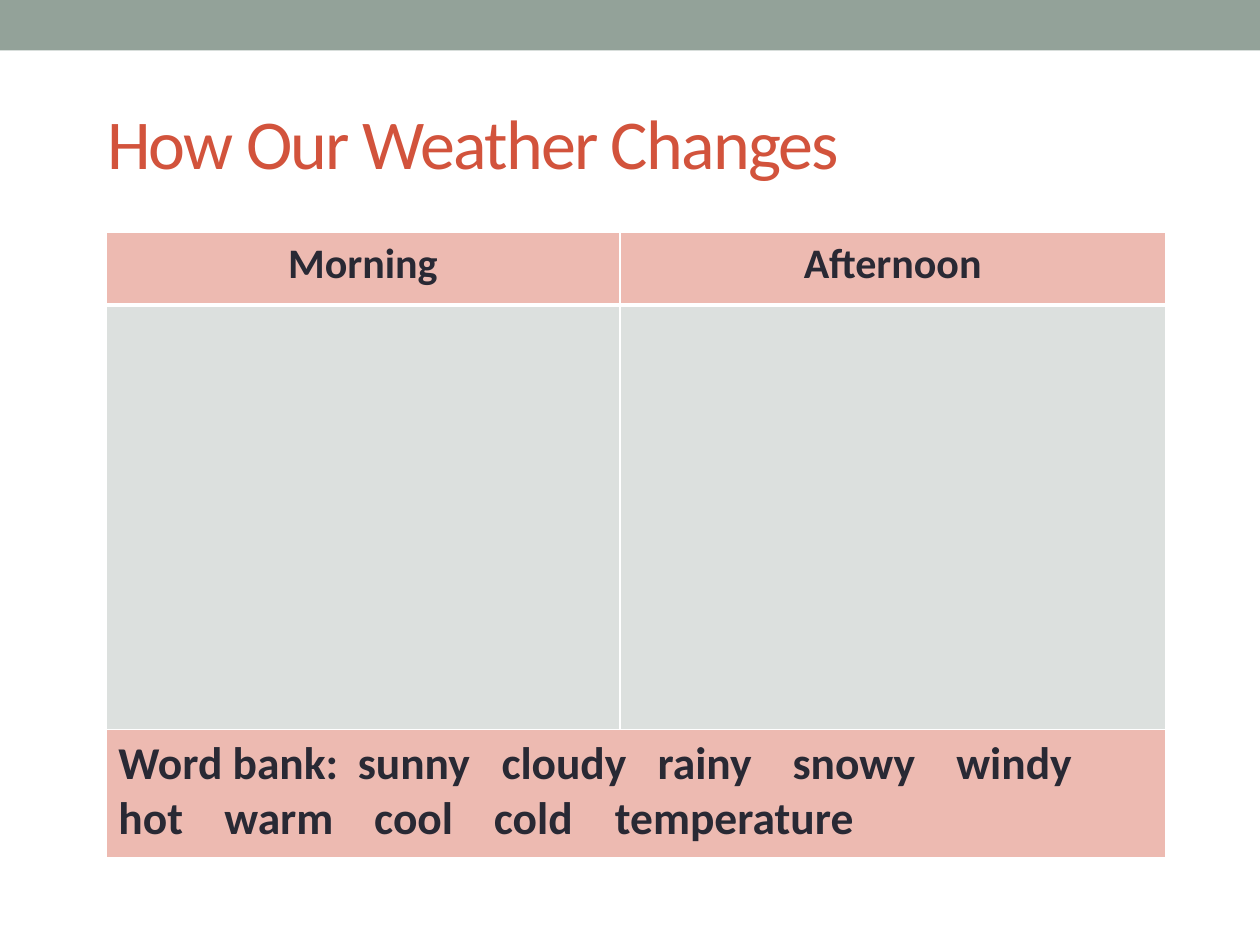
from lxml.etree import SubElement
from pptx import Presentation
from pptx.dml.color import RGBColor
from pptx.enum.shapes import MSO_SHAPE
from pptx.enum.text import MSO_ANCHOR, PP_ALIGN
from pptx.oxml.ns import qn
from pptx.util import Inches, Pt

COLORS = {
    "band": "93A299",
    "title": "D2533C",
    "text": "292934",
    "accent": "EDBAB1",
    "blank": "DCE0DE",
    "border": "FFFFFF",
}
FONT = "Calibri"

TITLE = "How Our Weather Changes"
HEADINGS = [("Morning", 2), ("Afternoon", 6)]  # text, space before in points
WORD_BANK = [  # words of a line, tab stops in inches
    (["Word bank:", "sunny", "cloudy", "rainy", "snowy", "windy"],
     [1.9, 3.04, 4.28, 5.35, 6.65]),
    (["hot", "warm", "cool", "cold", "temperature"],
     [0.84, 2.03, 2.98, 3.94]),
]
COLUMNS = [4.08, 4.33]
ROWS = [0.58, 3.37, 1.02]
ROW_FILLS = ["accent", "blank", "accent"]


def color(name):
    return RGBColor.from_string(COLORS[name])


def add_span(para, text, size, color_name, bold=False):
    span = para.add_run()
    span.text = text
    span.font.name = FONT
    span.font.size = Pt(size)
    span.font.bold = bold
    span.font.color.rgb = color(color_name)
    return span


def set_borders(cell, bottom_width):
    properties = cell._tc.get_or_add_tcPr()
    widths = {"a:lnL": 1, "a:lnR": 1, "a:lnT": 1, "a:lnB": bottom_width}
    for position, (tag, width) in enumerate(widths.items()):
        line = SubElement(properties, qn(tag), w=str(Pt(width)))
        fill = SubElement(line, qn("a:solidFill"))
        SubElement(fill, qn("a:srgbClr"), val=COLORS["border"])
        properties.insert(position, line)  # borders precede the fill


def set_tab_stops(para, stops):
    tabs = SubElement(para._p.get_or_add_pPr(), qn("a:tabLst"))
    for stop in stops:
        SubElement(tabs, qn("a:tab"), pos=str(Inches(stop)), algn="l")


deck = Presentation()
deck.slide_width, deck.slide_height = Inches(10), Inches(7.5)
page = deck.slides.add_slide(deck.slide_layouts[5])

band = page.shapes.add_shape(MSO_SHAPE.RECTANGLE, 0, 0, deck.slide_width, Inches(0.4))
band.shadow.inherit = False
band.fill.solid()
band.fill.fore_color.rgb = color("band")
band.line.fill.background()

title = page.shapes.title
title.left, title.top = Inches(0.75), Inches(0.58)
title.width, title.height = Inches(8.75), Inches(1.08)
title.text_frame.vertical_anchor = MSO_ANCHOR.MIDDLE
para = title.text_frame.paragraphs[0]
para.alignment = PP_ALIGN.LEFT
span = add_span(para, TITLE, 40, "title")
span.font._element.set("spc", "-100")

table = page.shapes.add_table(
    len(ROWS), len(COLUMNS), Inches(0.84), Inches(1.84),
    Inches(sum(COLUMNS)), Inches(sum(ROWS))).table
for column, width in zip(table.columns, COLUMNS):
    column.width = Inches(width)
for index, (row, height, fill) in enumerate(zip(table.rows, ROWS, ROW_FILLS)):
    row.height = Inches(height)
    for cell in row.cells:
        cell.fill.solid()
        cell.fill.fore_color.rgb = color(fill)
        set_borders(cell, bottom_width=3 if index == 0 else 1)

for cell, (heading, space) in zip(table.rows[0].cells, HEADINGS):
    para = cell.text_frame.paragraphs[0]
    para.alignment = PP_ALIGN.CENTER
    para.space_before = Pt(space)
    add_span(para, heading, 24, "text", bold=True)

bank = table.cell(2, 0)
bank.merge(table.cell(2, 1))
for index, (words, stops) in enumerate(WORD_BANK):
    frame = bank.text_frame
    para = frame.add_paragraph() if index else frame.paragraphs[0]
    set_tab_stops(para, stops)
    add_span(para, "\t".join(words), 26, "text", bold=True)

deck.save("out.pptx")
